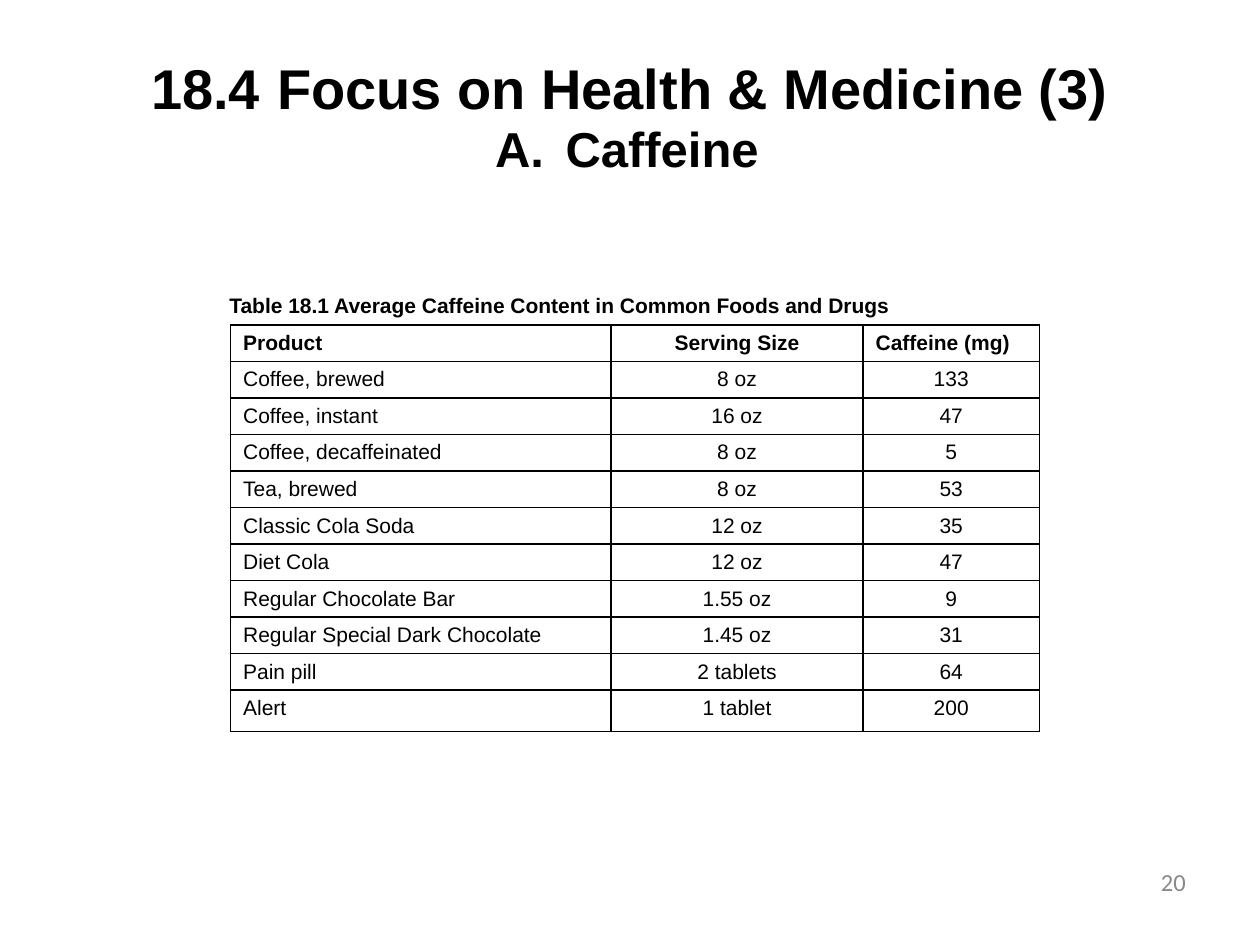
"""Build the caffeine content slide."""
from lxml.etree import SubElement
from pptx import Presentation
from pptx.dml.color import RGBColor
from pptx.enum.text import MSO_ANCHOR, MSO_AUTO_SIZE, PP_ALIGN as Align
from pptx.oxml import parse_xml
from pptx.oxml.ns import nsdecls, qn
from pptx.util import Inches, Pt

BLACK = RGBColor(0x00, 0x00, 0x00)
GRAY = RGBColor(0x89, 0x89, 0x89)

PRODUCTS = [
    ("Product", "Serving Size", "Caffeine (mg)"),
    ("Coffee, brewed", "8 oz", "133"),
    ("Coffee, instant", "16 oz", "47"),
    ("Coffee, decaffeinated", "8 oz", "5"),
    ("Tea, brewed", "8 oz", "53"),
    ("Classic Cola Soda", "12 oz", "35"),
    ("Diet Cola", "12 oz", "47"),
    ("Regular Chocolate Bar", "1.55 oz", "9"),
    ("Regular Special Dark Chocolate", "1.45 oz", "31"),
    ("Pain pill", "2 tablets", "64"),
    ("Alert", "1 tablet", "200"),
]
COLUMN_WIDTHS = (3.02, 2, 1.4)
ROW_HEIGHT = 0.29
LAST_ROW_HEIGHT = 0.33


class SlideBuilder:
    def __init__(self, slide, font="Arial"):
        self.slide = slide
        self.font = font

    def set_text(self, paragraph, text, size, bold=False, align=Align.LEFT,
                 color=BLACK, font=None):
        paragraph.text = text
        paragraph.alignment = align
        paragraph.font.name = font or self.font
        paragraph.font.size = Pt(size)
        paragraph.font.bold = bold
        paragraph.font.color.rgb = color

    def place(self, shape, left, top, width, height):
        shape.left, shape.top = Inches(left), Inches(top)
        shape.width, shape.height = Inches(width), Inches(height)
        shape.text_frame.word_wrap = True
        shape.text_frame.auto_size = MSO_AUTO_SIZE.NONE
        return shape.text_frame

    def title(self, text, box, size):
        frame = self.place(self.slide.shapes.title, *box)
        frame.vertical_anchor = MSO_ANCHOR.MIDDLE
        self.set_text(frame.paragraphs[0], text, size, True, Align.CENTER)

    def body(self, index, text, box, size, align=Align.LEFT, lettered=False):
        frame = self.place(self.slide.placeholders[index], *box)
        paragraph = frame.paragraphs[0]
        self.set_text(paragraph, text, size, True, align)
        indent = Inches(0.56) if lettered else 0
        bullet = 'buAutoNum type="alphaUcPeriod"' if lettered else "buNone"
        properties = paragraph._p.get_or_add_pPr()
        properties.set("marL", str(int(indent)))
        properties.set("indent", str(int(-indent)))
        properties.insert(0, parse_xml(f"<a:{bullet} {nsdecls('a')}/>"))

    def page_number(self, text, box):
        frame = self.place(self.slide.shapes.add_textbox(0, 0, 0, 0), *box)
        self.set_text(frame.paragraphs[0], text, 14, align=Align.RIGHT,
                      color=GRAY, font="Calibri")

    def border(self, cell):
        properties = cell._tc.get_or_add_tcPr()
        for side in ("lnL", "lnR", "lnT", "lnB"):
            line = SubElement(properties, qn(f"a:{side}"), w=str(int(Pt(1))))
            fill = SubElement(line, qn("a:solidFill"))
            SubElement(fill, qn("a:srgbClr"), val=str(BLACK))

    def table(self, rows, left, top, size):
        height = ROW_HEIGHT * (len(rows) - 1) + LAST_ROW_HEIGHT
        table = self.slide.shapes.add_table(
            len(rows), len(COLUMN_WIDTHS), Inches(left), Inches(top),
            Inches(sum(COLUMN_WIDTHS)), Inches(height)).table
        table.first_row = table.horz_banding = False
        for column, width in zip(table.columns, COLUMN_WIDTHS):
            column.width = Inches(width)
        for row in table.rows:
            row.height = Inches(ROW_HEIGHT)
        table.rows[len(rows) - 1].height = Inches(LAST_ROW_HEIGHT)
        for r, values in enumerate(rows):
            for c, value in enumerate(values):
                cell = table.cell(r, c)
                centered = c == 1 or (c == 2 and r > 0)
                self.set_text(cell.text_frame.paragraphs[0], value, size, r == 0,
                              Align.CENTER if centered else Align.LEFT)
                self.border(cell)
                cell.fill.background()


def main():
    presentation = Presentation()
    presentation.slide_width = Inches(10)
    presentation.slide_height = Inches(7.5)
    two_content = presentation.slide_layouts[3]
    builder = SlideBuilder(presentation.slides.add_slide(two_content))
    builder.title("18.4\tFocus on Health & Medicine (3)", (0.5, 0.4, 9, 0.58), 32)
    builder.body(1, "Caffeine", (3.55, 0.89, 2.85, 0.53), 28, Align.CENTER, True)
    builder.body(2, "Table 18.1 Average Caffeine Content in Common Foods and Drugs",
                 (1.72, 2.27, 5.57, 0.36), 12)
    builder.table(PRODUCTS, 1.83, 2.58, 12)
    builder.page_number("20", (7.84, 6.83, 1.67, 0.34))
    presentation.save("out.pptx")


if __name__ == "__main__":
    main()
